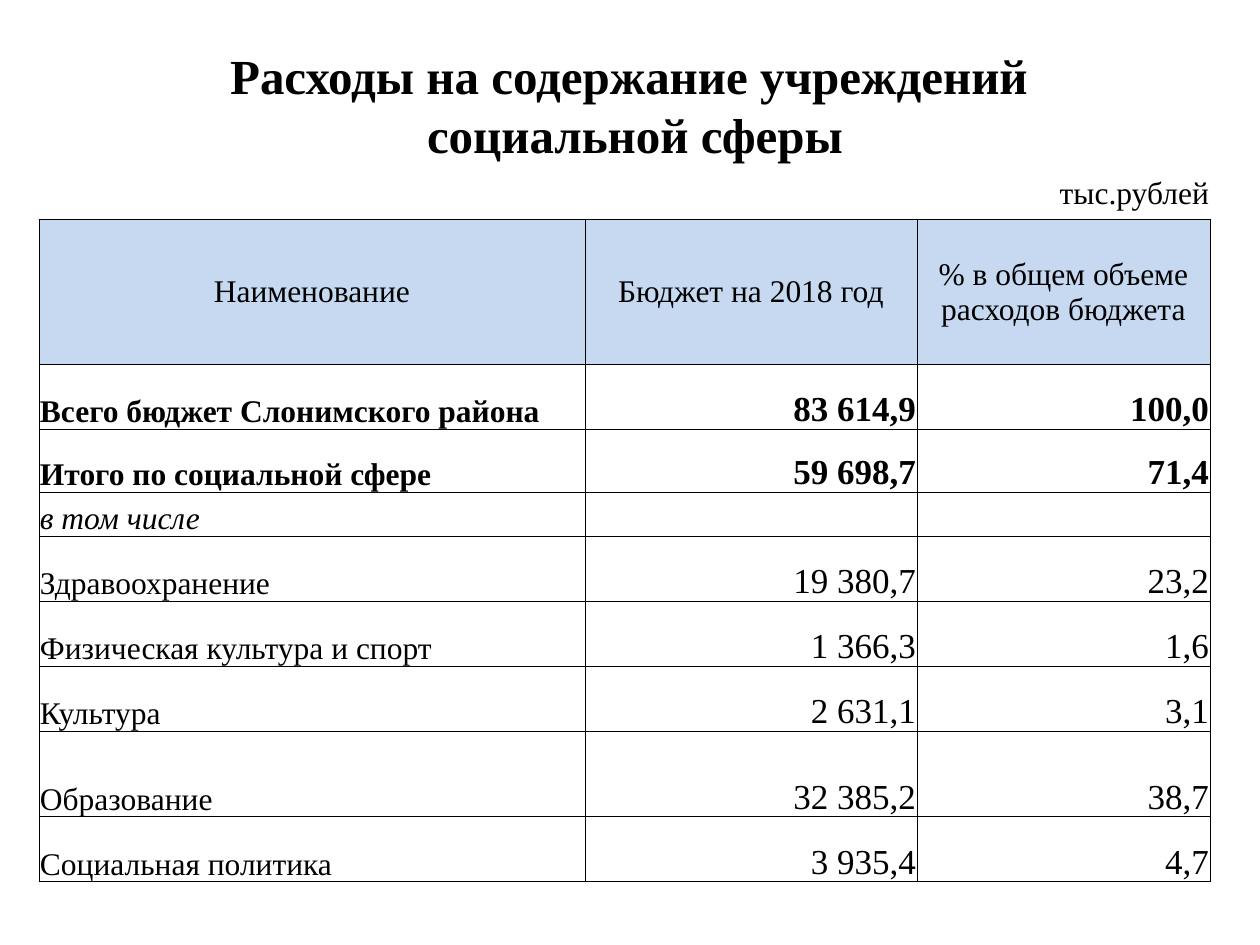
import pptx
import pptx.util
import pptx.dml.color
import pptx.enum.text
import pptx.oxml
import pptx.oxml.ns

PX = pptx.util.Inches(1) / 126
FONT = "Times New Roman"
BLACK = pptx.dml.color.RGBColor(0x00, 0x00, 0x00)
BLUE = pptx.dml.color.RGBColor(0xC6, 0xD9, 0xF1)
ALIGN = pptx.enum.text.PP_ALIGN
ANCHOR = pptx.enum.text.MSO_ANCHOR

TITLE = ["Расходы на содержание учреждений ", "социальной сферы"]
COLS = [546, 332, 293]
# Row height, then the cell texts
ROWS = [
    (51, "", "", "тыс.рублей"),
    (145, "Наименование", "Бюджет на 2018 год", "% в общем объеме расходов бюджета"),
    (65, "Всего бюджет Слонимского района", "83 614,9", "100,0"),
    (63, "Итого по социальной сфере", "59 698,7", "71,4"),
    (44, "в том числе", "", ""),
    (65, "Здравоохранение", "19 380,7", "23,2"),
    (65, "Физическая культура и спорт", "1 366,3", "1,6"),
    (65, "Культура", "2 631,1", "3,1"),
    (86, "Образование", "32 385,2", "38,7"),
    (65, "Социальная политика", "3 935,4", "4,7"),
]
UNIT, HEAD, TOTALS, NOTE = 0, 1, (2, 3), 4


def px(n):
    return pptx.util.Emu(round(n * PX))


def write(par, text, align, size, bold=False, italic=False):
    par.alignment = align
    font = par.add_run().font if text else par.font
    if text:
        par.runs[0].text = text
    look = {"name": FONT, "size": pptx.util.Pt(size), "bold": bold, "italic": italic}
    for key, value in look.items():
        setattr(font, key, value)
    font.color.rgb = BLACK


def add_title(slide):
    frame = slide.shapes.add_textbox(px(49), px(39), px(1172), px(131)).text_frame
    frame.word_wrap = True
    frame.auto_size = pptx.enum.text.MSO_AUTO_SIZE.SHAPE_TO_FIT_TEXT
    for i, line in enumerate(TITLE):
        par = frame.add_paragraph() if i else frame.paragraphs[0]
        write(par, line, ALIGN.CENTER, 28, bold=True)


def add_edges(cell, sides):
    """Draw thin black borders on the given sides, in L, R, T, B order."""
    props = cell._tc.get_or_add_tcPr()
    for side in sides:
        props.append(pptx.oxml.parse_xml(
            f'<a:ln{side} {pptx.oxml.ns.nsdecls("a")} w="6350"><a:solidFill>'
            f'<a:srgbClr val="{BLACK}"/></a:solidFill></a:ln{side}>'))


def fill_cell(cell, row, col, text):
    form = {
        "margin_left": px(1), "margin_right": px(1), "margin_top": px(1),
        "margin_bottom": 0,
        "vertical_anchor": ANCHOR.MIDDLE if row <= HEAD else ANCHOR.BOTTOM,
    }
    for key, value in form.items():
        setattr(cell, key, value)
    if row == HEAD:
        align = ALIGN.CENTER
    else:
        align = ALIGN.RIGHT if col else ALIGN.LEFT
    size = 20 if text and col and row > HEAD else 18
    write(cell.text_frame.paragraphs[0], text, align, size, row in TOTALS, row == NOTE)
    add_edges(cell, "B" if row == UNIT else "LRTB")
    if row == HEAD:
        cell.fill.solid()
        cell.fill.fore_color.rgb = BLUE
    else:
        cell.fill.background()


def add_budget(slide):
    high = sum(row[0] for row in ROWS)
    table = slide.shapes.add_table(
        len(ROWS), len(COLS), px(39), px(168), px(sum(COLS)), px(high)).table
    table.first_row = table.horz_banding = False
    for col, width in zip(table.columns, COLS):
        col.width = px(width)
    for r, (height, *texts) in enumerate(ROWS):
        table.rows[r].height = px(height)
        for c, text in enumerate(texts):
            fill_cell(table.cell(r, c), r, c, text)


def main():
    deck = pptx.Presentation()
    deck.slide_width, deck.slide_height = px(1260), px(945)
    slide = deck.slides.add_slide(deck.slide_layouts[6])
    add_title(slide)
    add_budget(slide)
    deck.save("out.pptx")


if __name__ == "__main__":
    main()
